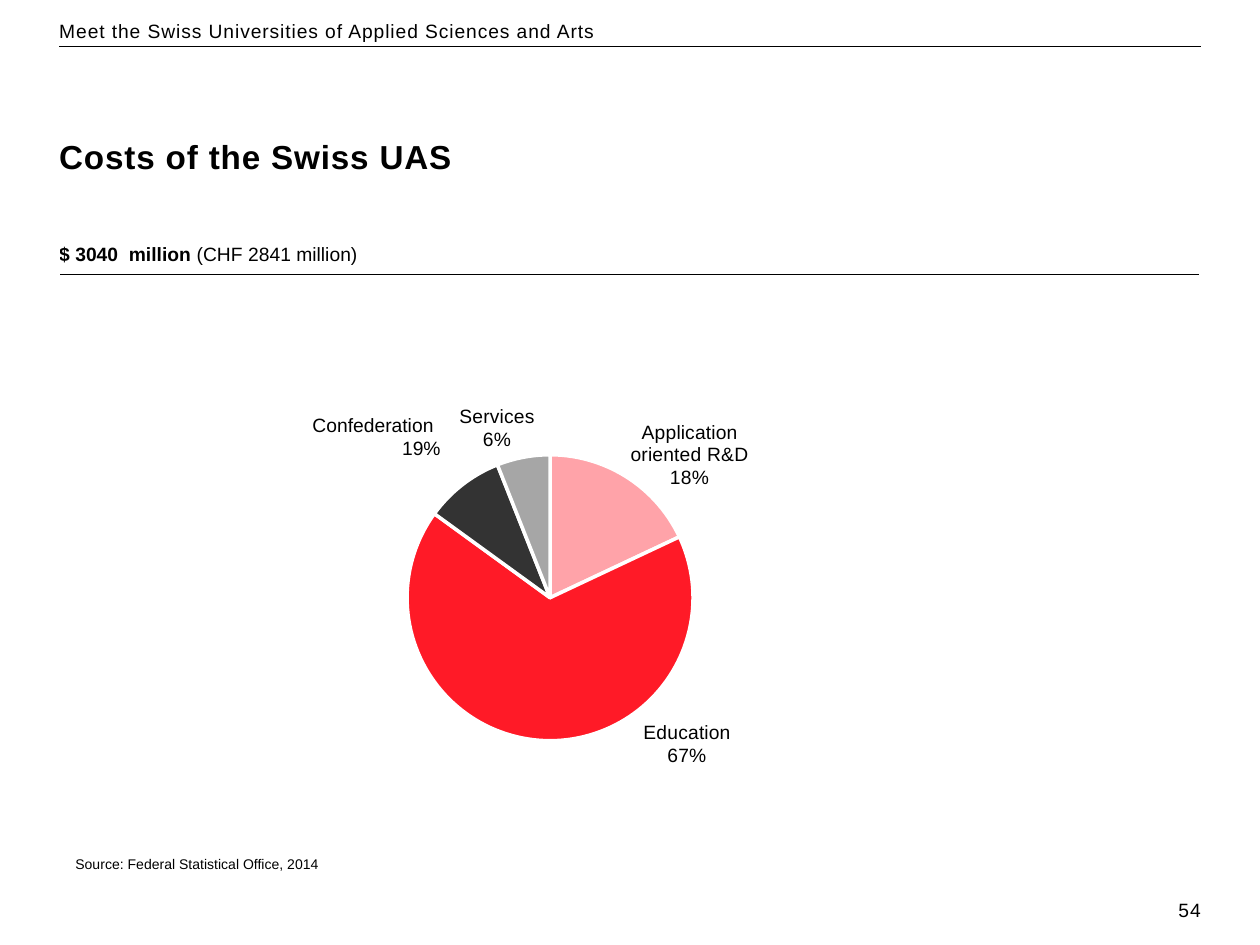
import dataclasses

import lxml.etree
import pptx
import pptx.chart.data
import pptx.dml.color
import pptx.enum.chart
import pptx.enum.shapes
import pptx.enum.text
import pptx.oxml
import pptx.oxml.ns
import pptx.util
from pptx.util import Inches, Pt

ALIGN = pptx.enum.text.PP_ALIGN
qn = pptx.oxml.ns.qn
BLACK, WHITE = "000000", "FFFFFF"
FONT = "Arial"
TITLE = "Costs of the Swiss UAS"


@dataclasses.dataclass
class Line:
    text: str
    size: float = 11
    bold: bool = False
    align: ALIGN = ALIGN.LEFT
    leading: float | None = None
    tracking: float = 0


@dataclasses.dataclass
class Caption:
    left: float
    top: float
    width: float
    height: float
    lines: list[Line]
    margins: tuple[float, float] = (0, 0)
    wrap: bool = True


@dataclasses.dataclass
class Slice:
    name: str
    value: int
    color: str
    label_shift: tuple[float, float] | None = None
    opacity: int = 100


CAPTIONS = [
    Caption(0.47, 0.15, 9.06, 0.37, [
        Line("Meet the Swiss Universities of Applied Sciences and Arts", leading=13.2, tracking=0.5)]),
    Caption(0.47, 1.08, 9.06, 0.42, [
        Line(TITLE, size=19, bold=True, leading=22.8, tracking=0.5)]),
    Caption(8.94, 7.13, 0.59, 0.2, [
        Line("54", align=ALIGN.RIGHT, leading=13.2, tracking=0.5)]),
    Caption(2.48, 3.28, 1.73, 0.56, [
        Line("Confederation"), Line("19%", align=ALIGN.CENTER)]),
    Caption(0.5, 6.74, 2.16, 0.24, [
        Line("Source: Federal Statistical Office, 2014", size=8)], margins=(0.1, 0.05), wrap=False),
]

SLICES = [
    Slice("Application oriented R&D", 18, "FFA3A9", label_shift=(0, 0.04)),
    Slice("Education", 67, "FF1A27", label_shift=(0.3, -0.06)),
    Slice("Confederation", 9, BLACK, opacity=80),
    Slice("Services", 6, "A6A6A6", label_shift=(0.02, 0)),
]


def rgb(color: str) -> pptx.dml.color.RGBColor:
    return pptx.dml.color.RGBColor.from_string(color)


def style_font(font, size: float, bold: bool | None = None) -> None:
    font.name = FONT
    font.size = Pt(size)
    font.bold = bold
    font.color.rgb = rgb(BLACK)


def add_caption(page, caption: Caption) -> None:
    box = page.shapes.add_textbox(
        Inches(caption.left), Inches(caption.top), Inches(caption.width), Inches(caption.height))
    frame = box.text_frame
    frame.word_wrap = caption.wrap
    frame.margin_left = frame.margin_right = Inches(caption.margins[0])
    frame.margin_top = frame.margin_bottom = Inches(caption.margins[1])
    for index, line in enumerate(caption.lines):
        para = frame.add_paragraph() if index else frame.paragraphs[0]
        para.text = line.text
        para.alignment = line.align
        if line.leading:
            para.line_spacing = Pt(line.leading)
        style_font(para.font, line.size, line.bold)
        if line.tracking:
            para.font._element.set("spc", str(int(line.tracking * 100)))


def add_header_rule(page) -> None:
    rule = page.shapes.add_connector(
        pptx.enum.shapes.MSO_CONNECTOR.STRAIGHT, Inches(0.47), Inches(0.37), Inches(9.53), Inches(0.37))
    rule.line.color.rgb = rgb(BLACK)
    rule.line.width = Pt(0.6)
    lxml.etree.SubElement(rule._element.spPr, qn("a:effectLst"))


def add_border(properties, side: str, color: str, width: float, position: int) -> None:
    border = lxml.etree.Element(qn(f"a:{side}"), w=str(Pt(width)))
    fill = lxml.etree.SubElement(border, qn("a:solidFill"))
    lxml.etree.SubElement(fill, qn("a:srgbClr"), val=color)
    properties.insert(position, border)


def add_total_table(page) -> None:
    table = page.shapes.add_table(
        1, 1, Inches(0.47), Inches(1.83), Inches(9.05), Inches(0.35)).table
    table.first_row = table.horz_banding = False
    cell = table.cell(0, 0)
    cell.margin_left = cell.margin_right = cell.margin_top = cell.margin_bottom = 0
    cell.vertical_anchor = pptx.enum.text.MSO_ANCHOR.MIDDLE
    cell.fill.solid()
    cell.fill.fore_color.rgb = rgb(WHITE)
    para = cell.text_frame.paragraphs[0]
    para.line_spacing = Pt(15)
    for text, bold in (("$ 3040  million ", True), ("(CHF 2841 million)", False)):
        span = para.add_run()
        span.text = text
        style_font(span.font, 11, bold)
    properties = cell._tc.get_or_add_tcPr()
    for position, side in enumerate(("lnL", "lnR", "lnT")):
        add_border(properties, side, WHITE, 1, position)
    add_border(properties, "lnB", BLACK, 0.5, 3)


def add_layout(parent, position: int, **values: str | float) -> None:
    layout = lxml.etree.Element(qn("c:layout"))
    manual = lxml.etree.SubElement(layout, qn("c:manualLayout"))
    for name, value in values.items():
        lxml.etree.SubElement(manual, qn(f"c:{name}"), val=str(value))
    parent.insert(position, layout)


def point_label(index: int, part: Slice):
    label = lxml.etree.Element(qn("c:dLbl"))
    lxml.etree.SubElement(label, qn("c:idx"), val=str(index))
    if part.label_shift is None:
        lxml.etree.SubElement(label, qn("c:delete"), val="1")
        return label
    add_layout(label, 1, x=part.label_shift[0], y=part.label_shift[1])
    lxml.etree.SubElement(label, qn("c:dLblPos"), val="outEnd")
    shown = {"LegendKey": 0, "Val": 0, "CatName": 1, "SerName": 0, "Percent": 1, "BubbleSize": 0}
    for name, value in shown.items():
        lxml.etree.SubElement(label, qn(f"c:show{name}"), val=str(value))
    lxml.etree.SubElement(label, qn("c:separator")).text = "\n"
    return label


def add_cost_chart(page) -> None:
    data = pptx.chart.data.CategoryChartData()
    data.categories = [part.name for part in SLICES]
    data.add_series(TITLE, [part.value for part in SLICES])
    chart = page.shapes.add_chart(
        pptx.enum.chart.XL_CHART_TYPE.PIE, Inches(2.07), Inches(2.99), Inches(5.16), Inches(3.44), data).chart
    chart.has_legend = chart.has_title = False
    style_font(chart.font, 11)
    plot_area = chart._chartSpace.chart.plotArea
    for layout in plot_area.findall(qn("c:layout")):
        plot_area.remove(layout)
    add_layout(plot_area, 0, layoutTarget="inner", xMode="edge", yMode="edge", x=0.22, y=0.18, w=0.45, h=0.66)
    plot = chart.plots[0]
    plot.vary_by_categories = True
    series = plot.series[0]
    labels = series.data_labels
    labels.show_value = False
    labels.show_category_name = labels.show_percentage = True
    labels.position = pptx.enum.chart.XL_LABEL_POSITION.OUTSIDE_END
    style_font(labels.font, 11)
    for leader in labels._element.findall(qn("c:showLeaderLines")):
        labels._element.remove(leader)
    lxml.etree.SubElement(labels._element, qn("c:showLeaderLines"), val="0")
    for index, part in enumerate(SLICES):
        labels._element.insert(index, point_label(index, part))
        point = series.points[index]
        look = point.format
        look.fill.solid()
        look.fill.fore_color.rgb = rgb(part.color)
        look.line.color.rgb = rgb(WHITE)
        look.line.width = Pt(2)
        if part.opacity < 100:
            colors = series._element.iter(qn("a:srgbClr"))
            fill = next(color for color in colors
                        if color.get("val") == part.color and color.getparent().getparent().tag == qn("c:spPr"))
            lxml.etree.SubElement(fill, qn("a:alpha"), val=str(part.opacity * 1000))


def main() -> None:
    deck = pptx.Presentation()
    deck.slide_width, deck.slide_height = Inches(10), Inches(7.5)
    page = deck.slides.add_slide(deck.slide_layouts[6])
    add_header_rule(page)
    add_total_table(page)
    add_cost_chart(page)
    for caption in CAPTIONS:
        add_caption(page, caption)
    deck.save("out.pptx")


if __name__ == "__main__":
    main()
